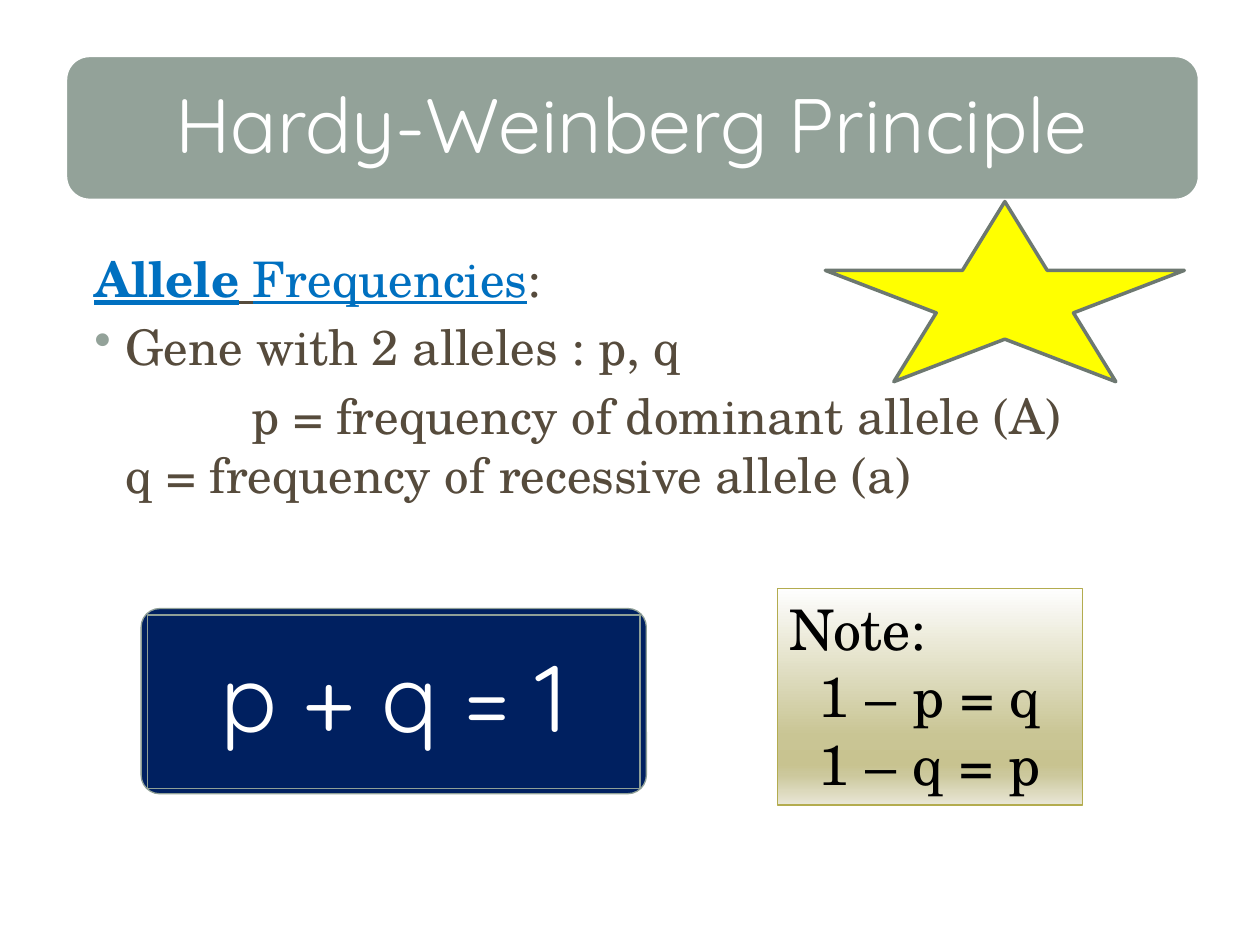
from lxml import etree
from pptx import Presentation
from pptx.dml.color import RGBColor as RGB
from pptx.enum.shapes import MSO_SHAPE as SHAPE
from pptx.enum.text import MSO_ANCHOR as ANCHOR, PP_ALIGN as ALIGN
from pptx.oxml.ns import qn
from pptx.util import Inches, Pt

HEX = {
    "sage": "93A299", "edge": "8F9F96", "navy": "002060", "white": "FFFFFF",
    "blue": "0070C0", "brown": "564B3C", "black": "000000",
    "yellow": "FFFF00", "slate": "6D7871", "olive": "B3AC4F",
}
FADE = [(0, "FEFEFE"), (68, "C9C594"), (81, "C8C390"), (86, "CCC89C"), (100, "E9E7D7")]
SANS, SERIF = "Quicksand", "TeX Gyre Schola"


def color(name):
    return RGB.from_string(HEX[name])


def add_shape(slide, kind, box, fill, line, width, adj=None):
    shape = slide.shapes.add_shape(kind, *map(Inches, box))
    shape.shadow.inherit = False
    if fill:
        shape.fill.solid()
        shape.fill.fore_color.rgb = color(fill)
    shape.line.color.rgb = color(line)
    shape.line.width = Pt(width)
    if adj is not None:
        shape.adjustments[0] = adj
    return shape


def fade(shape):
    """Fill the shape from top to bottom with the stops of FADE."""
    grad = etree.Element(qn("a:gradFill"), rotWithShape="1")
    stops = etree.SubElement(grad, qn("a:gsLst"))
    for place, tint in FADE:
        stop = etree.SubElement(stops, qn("a:gs"), pos=str(place * 1000))
        etree.SubElement(stop, qn("a:srgbClr"), val=tint)
    etree.SubElement(grad, qn("a:lin"), ang="5400000", scaled="0")
    shape.element.spPr.find(qn("a:prstGeom")).addnext(grad)


def set_frame(shape, inset=None, anchor=ANCHOR.TOP):
    frame = shape.text_frame
    frame.word_wrap = True
    frame.vertical_anchor = anchor
    if inset is not None:
        for side in ("left", "right", "top", "bottom"):
            setattr(frame, f"margin_{side}", Inches(inset))
    return frame


def add_run(para, text, tint, **form):
    run = para.add_run()
    run.text = text
    run.font.color.rgb = color(tint)
    for key, value in form.items():
        setattr(run.font, key, value)


def add_head(shape, text, size, inset):
    """Write one centred line of large white text."""
    para = set_frame(shape, inset, ANCHOR.MIDDLE).paragraphs[0]
    para.alignment = ALIGN.CENTER
    para.line_spacing = 0.9
    add_run(para, text, "white", name=SANS, size=Pt(size))


def indent(para, first, bullet=None):
    props = para._p.get_or_add_pPr()
    props.set("marL", str(Inches(0.38)))
    props.set("indent", str(Inches(first)))
    if bullet:
        tint = etree.SubElement(props, qn("a:buClr"))
        etree.SubElement(tint, qn("a:srgbClr"), val=HEX["sage"])
        etree.SubElement(props, qn("a:buChar"), char=bullet)


def add_body(slide):
    box = slide.shapes.add_textbox(*map(Inches, (0.52, 1.92, 9, 4.78)))
    frame = set_frame(box)
    form = {"name": SERIF, "size": Pt(28)}
    head = frame.paragraphs[0]
    indent(head, -0.25)
    add_run(head, "Allele", "blue", bold=True, underline=True, **form)
    add_run(head, " ", "brown", underline=True, **form)
    add_run(head, "Frequencies", "blue", underline=True, **form)
    add_run(head, ":", "brown", **form)

    gene, terms = frame.add_paragraph(), frame.add_paragraph()
    gene.space_before = terms.space_before = Pt(5.6)
    indent(gene, -0.25, "•")
    add_run(gene, "Gene with 2 alleles : p, q", "brown", **form)
    indent(terms, 1)
    add_run(terms, "p = frequency of dominant allele (A)", "brown", **form)
    terms.add_line_break()
    add_run(terms, "q = frequency of recessive allele (a)", "brown", **form)


def add_note(slide):
    note = add_shape(slide, SHAPE.RECTANGLE, (6.17, 4.67, 2.42, 1.72), None, "olive", 0.75)
    fade(note)
    frame = set_frame(note)
    for i, text in enumerate(("Note:", "1 – p = q", "1 – q = p")):
        para = frame.add_paragraph() if i else frame.paragraphs[0]
        para.alignment = ALIGN.CENTER if i else ALIGN.LEFT
        add_run(para, text, "black", name=SERIF, size=Pt(32))


def main():
    deck = Presentation()
    deck.slide_width, deck.slide_height = Inches(10), Inches(7.5)
    slide = deck.slides.add_slide(deck.slide_layouts[6])

    add_shape(slide, SHAPE.ROUNDED_RECTANGLE, (0.52, 0.44, 9, 1.15), "sage", "white", 2)
    title = slide.shapes.add_textbox(*map(Inches, (0.57, 0.5, 8.89, 1.04)))
    add_head(title, "Hardy-Weinberg Principle", 44, 0.18)
    add_body(slide)

    look = ("navy", "edge", 0.75)
    add_shape(slide, SHAPE.ROUNDED_RECTANGLE, (1.12, 4.83, 4.01, 1.47), *look, adj=0.1)
    rule = add_shape(slide, SHAPE.RECTANGLE, (1.17, 4.88, 3.91, 1.38), *look)
    add_head(rule, "p + q = 1", 54, 0.11)

    add_note(slide)
    add_shape(slide, SHAPE.STAR_5_POINT, (6.55, 1.6, 2.85, 1.43), "yellow", "slate", 2)
    deck.save("out.pptx")


if __name__ == "__main__":
    main()
